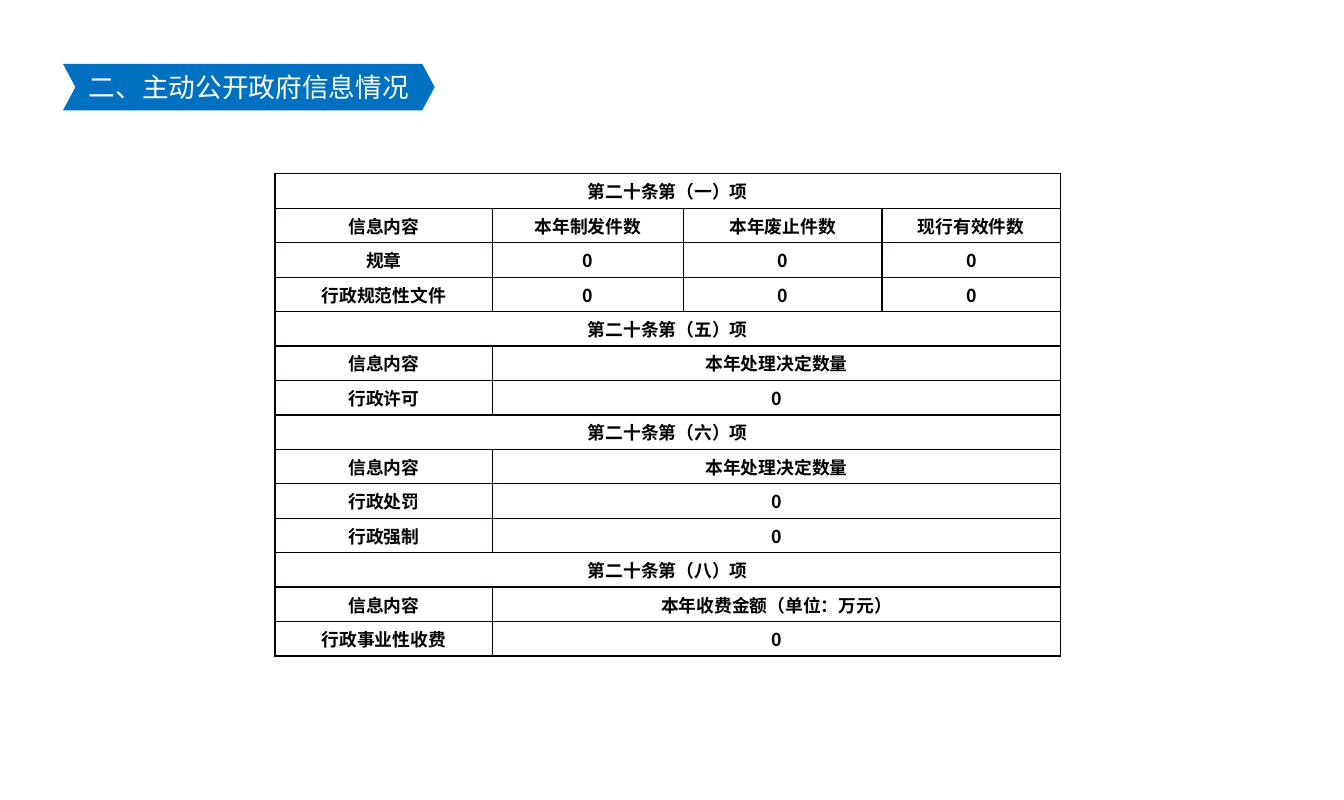
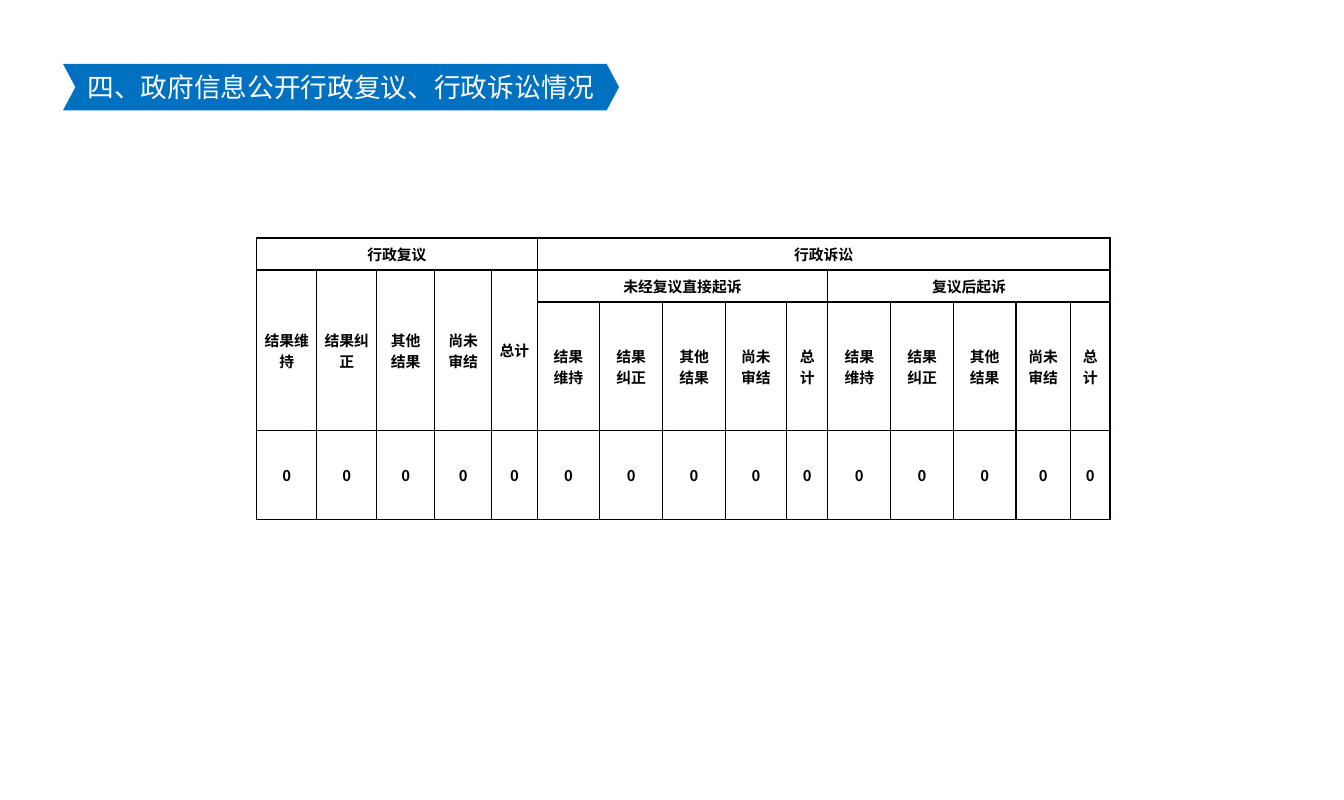
from lxml import etree
from pptx import Presentation
from pptx.dml.color import RGBColor as RGB
from pptx.enum.shapes import MSO_SHAPE as SHAPE
from pptx.enum.text import MSO_ANCHOR as ANCHOR, PP_ALIGN as ALIGN
from pptx.oxml import parse_xml
from pptx.oxml.ns import nsdecls, qn
from pptx.util import Cm, Pt

COLORS = {"band": "0070C0", "title": "FFFFFF", "text": "000000",
          "cell": "FFFFFF", "border": "080000"}
CJK_FONT = "Noto Sans CJK SC"
TITLE_FONT = {"name": "Calibri", "size": Pt(18), "bold": False}
LEFT, UP = None, "^"  # cell merged into the one to its left, or above it


def write(tf, text, font, color):
    """Fill a text frame with centred lines, one paragraph per line."""
    tf.text = text
    for p in tf.paragraphs:
        p.alignment = ALIGN.CENTER
        for r in p.runs:
            for name, value in font.items():
                setattr(r.font, name, value)
            r.font.color.rgb = RGB.from_string(COLORS[color])
            ea = etree.SubElement(r.font._element, qn("a:ea"))
            ea.set("typeface", CJK_FONT)


def add_grid(s, at, widths, heights, rows, size, inset):
    """Add a bordered table, merging cells along the LEFT and UP marks."""
    frame = s.shapes.add_table(len(rows), len(widths), Cm(at[0]), Cm(at[1]),
                               Cm(sum(widths)), Cm(sum(heights)))
    table = frame.table
    table.first_row = table.horz_banding = False
    for col, width in zip(table.columns, widths):
        col.width = Cm(width)
    for row, height in zip(table.rows, heights):
        row.height = Cm(height)

    cell_format = {"margin_left": Cm(inset), "margin_right": Cm(inset),
                   "margin_top": 0, "margin_bottom": 0,
                   "vertical_anchor": ANCHOR.MIDDLE}
    font = {"name": CJK_FONT, "size": Pt(size), "bold": True}
    for i, row in enumerate(rows):
        for j, text in enumerate(row):
            cell = table.cell(i, j)
            for name, value in cell_format.items():
                setattr(cell, name, value)
            for side in ("lnL", "lnR", "lnT", "lnB"):
                cell._tc.get_or_add_tcPr().append(parse_xml(
                    f'<a:{side} {nsdecls("a")} w="{Pt(1)}"><a:solidFill>'
                    f'<a:srgbClr val="{COLORS["border"]}"/></a:solidFill></a:{side}>'))
            cell.fill.solid()
            cell.fill.fore_color.rgb = RGB.from_string(COLORS["cell"])
            if text in (LEFT, UP):
                continue
            write(cell.text_frame, text, font, "text")
            right, bottom = j, i
            while right + 1 < len(row) and row[right + 1] is LEFT:
                right += 1
            while bottom + 1 < len(rows) and rows[bottom + 1][j] == UP:
                bottom += 1
            if (bottom, right) != (i, j):
                cell.merge(table.cell(bottom, right))


prs = Presentation()
prs.slide_width, prs.slide_height = Cm(32), Cm(19.05)

# Slide titles on chevron bands
titles = [("二、主动公开政府信息情况", 8.85),
          ("四、政府信息公开行政复议、行政诉讼情况", 13.24)]
slides = []
for title, width in titles:
    s = prs.slides.add_slide(prs.slide_layouts[6])
    sp = s.shapes.add_shape(SHAPE.CHEVRON, Cm(1.5), Cm(1.52), Cm(width), Cm(1.11))
    sp.adjustments[0] = 0.267
    sp.shadow.inherit = False
    sp.fill.solid()
    sp.fill.fore_color.rgb = RGB.from_string(COLORS["band"])
    sp.line.fill.background()
    tf = sp.text_frame
    tf_format = {"margin_left": Cm(0.23), "margin_right": Cm(0.23),
                 "margin_top": Cm(0.12), "margin_bottom": Cm(0.12),
                 "vertical_anchor": ANCHOR.MIDDLE, "word_wrap": True}
    for name, value in tf_format.items():
        setattr(tf, name, value)
    write(tf, title, TITLE_FONT, "title")
    slides.append(s)
disclosure, litigation = slides

# Proactive disclosure: each section has a heading, a header row and items
sections = [
    ("一", ["本年制发件数", "本年废止件数", "现行有效件数"], ["规章", "行政规范性文件"]),
    ("五", ["本年处理决定数量"], ["行政许可"]),
    ("六", ["本年处理决定数量"], ["行政处罚", "行政强制"]),
    ("八", ["本年收费金额（单位：万元）"], ["行政事业性收费"]),
]
rows = []
for number, headers, items in sections:
    pad = [LEFT] * (3 - len(headers))
    rows.append([f"第二十条第（{number}）项"] + [LEFT] * 3)
    rows.append(["信息内容"] + headers + pad)
    rows += [[item] + ["0"] * len(headers) + pad for item in items]
add_grid(disclosure, (6.55, 4.14), [5.18, 4.54, 4.73, 4.25],
         [0.82] * len(rows), rows, size=12, inset=0.1)

# Reconsideration and litigation: three groups of the same five outcomes
outcomes = ["结果维持", "结果纠正", "其他结果", "尚未审结", "总计"]
split = ["结果\n维持", "结果\n纠正", "其他\n结果"]
rows = [
    ["行政复议"] + [LEFT] * 4 + ["行政诉讼"] + [LEFT] * 9,
    outcomes + ["未经复议直接起诉"] + [LEFT] * 4 + ["复议后起诉"] + [LEFT] * 4,
    [UP] * 5 + split + ["尚未\n审结", "总计"] + split + ["尚未审结", "总计"],
    ["0"] * 15,
]
widths = [1.43, 1.43, 1.38, 1.36, 1.08,
          1.49, 1.5, 1.49, 1.46, 0.98,
          1.5, 1.49, 1.49, 1.3, 0.94]
add_grid(litigation, (6.11, 5.67), widths, [0.76, 0.76, 3.07, 2.11],
         rows, size=10, inset=0.18)

prs.save("out.pptx")
